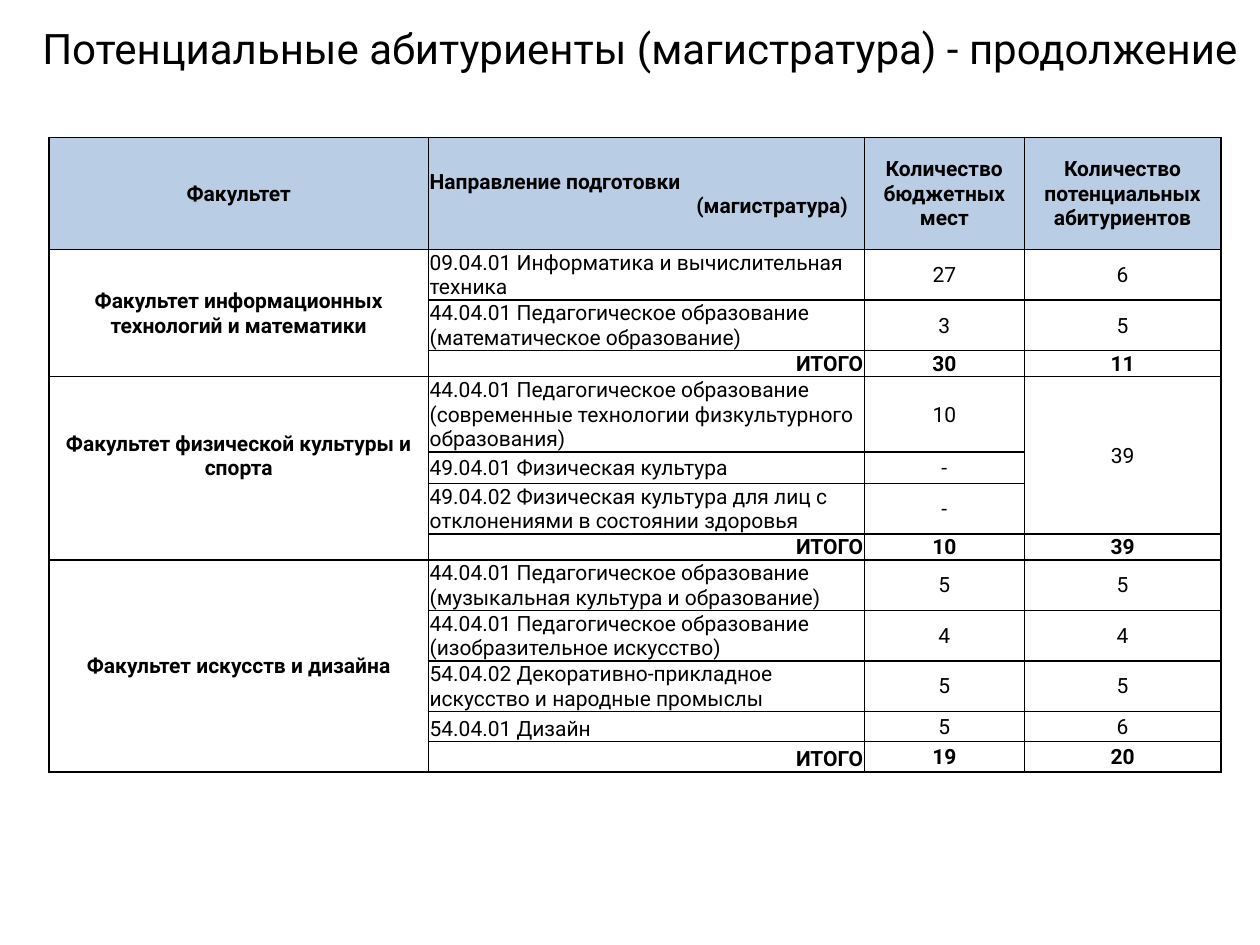
"""Build the slide on prospective master's applicants by faculty."""
from dataclasses import dataclass

from lxml import etree
from pptx import Presentation
from pptx import util as u
from pptx.dml.color import RGBColor
from pptx.enum import text
from pptx.oxml import ns


@dataclass(frozen=True)
class Theme:
    """Colours, font and type sizes of the slide."""
    font: str = "Roboto"
    ink: str = "000000"
    head: str = "B9CDE5"
    title: int = 24
    body: int = 12
    rule: int = 1


THEME = Theme()
LEFT, MID, RIGHT = text.PP_ALIGN.LEFT, text.PP_ALIGN.CENTER, text.PP_ALIGN.RIGHT
MIDDLE, BOTTOM = text.MSO_ANCHOR.MIDDLE, text.MSO_ANCHOR.BOTTOM
TOTAL = "ИТОГО"
COLS = [3.01, 3.46, 1.27, 1.56]
HEAD = ["Факультет", "Направление подготовки\n(магистратура)",
        "Количество бюджетных мест", "Количество потенциальных абитуриентов"]
HEAD_HIGH = 0.89
GROUPS = [
    ("Факультет информационных технологий и математики", [
        ("09.04.01 Информатика и вычислительная техника", "27", "6", 0.4),
        ("44.04.01 Педагогическое образование (математическое образование)", "3", "5", 0.4),
        (TOTAL, "30", "11", 0.2)]),
    ("Факультет физической культуры и спорта", [
        ("44.04.01 Педагогическое образование (современные технологии "
         "физкультурного образования)", "10", "39", 0.6),
        ("49.04.01 Физическая культура", "-", None, 0.25),
        ("49.04.02 Физическая культура для лиц с отклонениями в состоянии здоровья",
         "-", None, 0.4),
        (TOTAL, "10", "39", 0.2)]),
    ("Факультет искусств и дизайна", [
        ("44.04.01 Педагогическое образование (музыкальная культура и образование)",
         "5", "5", 0.4),
        ("44.04.01 Педагогическое образование (изобразительное искусство)", "4", "4", 0.4),
        ("54.04.02 Декоративно-прикладное искусство и народные промыслы", "5", "5", 0.4),
        ("54.04.01 Дизайн", "5", "6", 0.24),
        (TOTAL, "19", "20", 0.24)]),
]
LOW = {"54.04.01 Дизайн"}


def style(para, size, bold=False, align=MID):
    """Set the font and alignment of a paragraph."""
    para.alignment = align
    font = para.font
    font.name, font.size, font.bold = THEME.font, u.Pt(size), bold
    font.color.rgb = RGBColor.from_string(THEME.ink)


def frame(cell):
    """Draw a thin line on all four sides of a cell."""
    props = cell._tc.get_or_add_tcPr()
    for side in ("lnL", "lnR", "lnT", "lnB"):
        line = etree.SubElement(props, ns.qn(f"a:{side}"), w=str(u.Pt(THEME.rule)))
        fill = etree.SubElement(line, ns.qn("a:solidFill"))
        etree.SubElement(fill, ns.qn("a:srgbClr"), val=THEME.ink)


def write(cell, words, bold=False, align=MID, anchor=MIDDLE):
    """Put styled text in a cell."""
    cell.text = words
    cell.vertical_anchor = anchor
    for para in cell.text_frame.paragraphs:
        style(para, THEME.body, bold, align)


def add_title(slide, words):
    """Place and format the title."""
    title = slide.shapes.title
    title.left, title.top = u.Inches(0), u.Inches(0)
    title.width, title.height = u.Inches(10.16), u.Inches(0.76)
    title.text_frame.text = words
    title.text_frame.vertical_anchor = MIDDLE
    style(title.text_frame.paragraphs[0], THEME.title)


def add_grid(slide):
    """Add the framed table with its column widths and row heights."""
    highs = [HEAD_HIGH] + [row[-1] for _, rows in GROUPS for row in rows]
    table = slide.shapes.add_table(
        len(highs), len(COLS), u.Inches(0.39), u.Inches(1.09),
        u.Inches(sum(COLS)), u.Inches(sum(highs))).table
    table.first_row = table.horz_banding = False
    for col, wide in zip(table.columns, COLS):
        col.width = u.Inches(wide)
    for row, high in zip(table.rows, highs):
        row.height = u.Inches(high)
    for cell in table.iter_cells():
        cell.margin_left = cell.margin_right = cell.margin_top = u.Inches(0.01)
        cell.margin_bottom = 0
        frame(cell)
        cell.fill.background()
    return table


def fill_head(table):
    """Write the header row."""
    for col, words in enumerate(HEAD):
        cell = table.cell(0, col)
        write(cell, words, bold=True)
        cell.fill.solid()
        cell.fill.fore_color.rgb = RGBColor.from_string(THEME.head)
    first, last = table.cell(0, 1).text_frame.paragraphs
    first.alignment, last.alignment = LEFT, RIGHT
    last._p.get_or_add_pPr().set("marR", str(u.Inches(0.12)))


def fill_group(table, top, name, rows):
    """Write one faculty with its programmes and total."""
    end = top + len(rows) - 1
    table.cell(top, 0).merge(table.cell(end, 0))
    write(table.cell(top, 0), name, bold=True)
    for row, (course, seats, count, _) in enumerate(rows, top):
        bold = course == TOTAL
        low = course in LOW or (bold and end == len(table.rows) - 1)
        write(table.cell(row, 1), course, bold, RIGHT if bold else LEFT,
              BOTTOM if low else MIDDLE)
        write(table.cell(row, 2), seats, bold)
        if count is None:
            continue
        write(table.cell(row, 3), count, bold)
    gaps = [row for row, item in enumerate(rows, top) if item[2] is None]
    if gaps:
        table.cell(gaps[0] - 1, 3).merge(table.cell(gaps[-1], 3))
        table.cell(top, 0).margin_bottom = u.Inches(0.2)


def main():
    """Build and save the slide."""
    deck = Presentation()
    deck.slide_width, deck.slide_height = u.Inches(10), u.Inches(7.5)
    slide = deck.slides.add_slide(deck.slide_layouts[5])
    add_title(slide, "Потенциальные абитуриенты (магистратура) - продолжение")
    table = add_grid(slide)
    fill_head(table)
    top = 1
    for name, rows in GROUPS:
        fill_group(table, top, name, rows)
        top += len(rows)
    deck.save("out.pptx")


if __name__ == "__main__":
    main()
